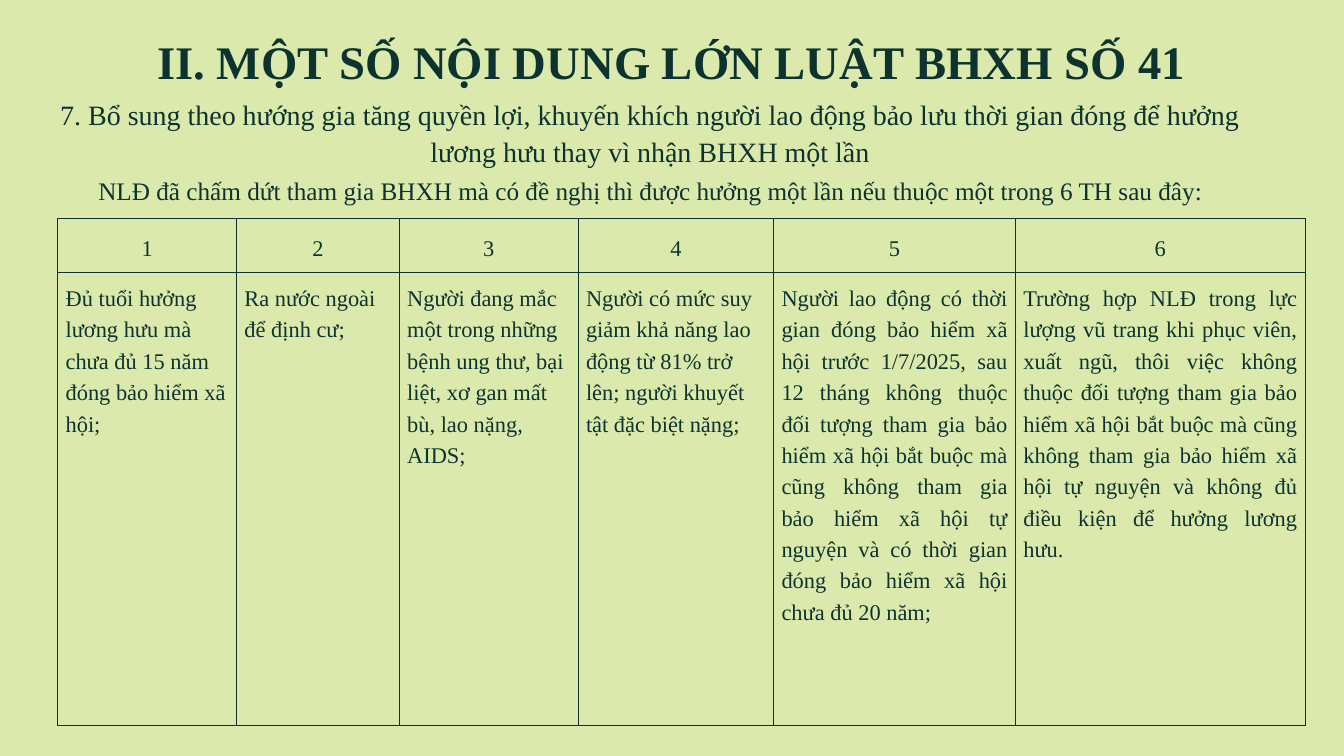
from lxml import etree
from pptx import Presentation
from pptx.dml.color import RGBColor
from pptx.enum.text import MSO_ANCHOR as Anchor, MSO_AUTO_SIZE as AutoSize, PP_ALIGN as Align
from pptx.oxml.ns import qn
from pptx.util import Cm, Pt

INK, PAPER = "0D3330", "DBEAAC"
FONT = "Times New Roman"

COLUMN_WIDTHS = [6.76, 6.15, 6.76, 7.39, 9.14, 10.95]
ROW_HEIGHTS = [2.03, 17.15]
CASES = [
    ("Đủ tuổi hưởng lương hưu mà chưa đủ 15 năm đóng bảo hiểm xã hội;", Align.LEFT),
    ("Ra nước ngoài để định cư;", Align.LEFT),
    ("Người đang mắc một trong những bệnh ung thư, bại liệt, xơ gan mất bù, "
     "lao nặng, AIDS;", Align.LEFT),
    ("Người có mức suy giảm khả năng lao động từ 81% trở lên; "
     "người khuyết tật đặc biệt nặng;", Align.LEFT),
    ("Người lao động có thời gian đóng bảo hiểm xã hội trước 1/7/2025, sau 12 tháng "
     "không thuộc đối tượng tham gia bảo hiểm xã hội bắt buộc mà cũng không tham gia "
     "bảo hiểm xã hội tự nguyện và có thời gian đóng bảo hiểm xã hội chưa đủ 20 năm;",
     Align.JUSTIFY),
    ("Trường hợp NLĐ trong lực lượng vũ trang khi phục viên, xuất ngũ, thôi việc "
     "không thuộc đối tượng tham gia bảo hiểm xã hội bắt buộc mà cũng không tham gia "
     "bảo hiểm xã hội tự nguyện và không đủ điều kiện để hưởng lương hưu.",
     Align.JUSTIFY),
]


def rgb(color):
    return RGBColor.from_string(color)


def set_all(obj, values):
    for name, value in values.items():
        setattr(obj, name, value)


class Deck:
    """Holds the style and the current slide."""

    def __init__(self, width, height):
        self.prs = Presentation()
        self.prs.slide_width, self.prs.slide_height = Cm(width), Cm(height)
        self.s = None

    def slide(self, color):
        self.s = self.prs.slides.add_slide(self.prs.slide_layouts[6])
        fill = self.s.background.fill
        fill.solid()
        fill.fore_color.rgb = rgb(color)

    def paragraph(self, tf, text, size, leading, align, bold=False):
        p = tf.paragraphs[0]
        set_all(p, {"alignment": align, "line_spacing": Pt(leading)})
        r = p.add_run()
        r.text = text
        set_all(r.font, {"name": FONT, "size": Pt(size), "bold": bold})
        r.font.color.rgb = rgb(INK)

    def text(self, box, text, size, leading, bold=False):
        tf = self.s.shapes.add_textbox(*map(Cm, box)).text_frame
        set_all(tf, {"word_wrap": True, "auto_size": AutoSize.SHAPE_TO_FIT_TEXT,
                     "margin_left": 0, "margin_right": 0,
                     "margin_top": 0, "margin_bottom": 0})
        self.paragraph(tf, text, size, leading, Align.CENTER, bold)

    def borders(self, cell):
        """Draw a thin line on all four sides of a cell."""
        tc_pr = cell._tc.get_or_add_tcPr()
        for i, side in enumerate(("lnL", "lnR", "lnT", "lnB")):
            ln = etree.Element(qn(f"a:{side}"), w=str(int(Pt(0.75))))
            fill = etree.SubElement(ln, qn("a:solidFill"))
            etree.SubElement(fill, qn("a:srgbClr"), val=INK)
            tc_pr.insert(i, ln)

    def table(self, left, top, widths, heights, rows):
        """Add a table; each cell is (text, alignment, anchor)."""
        table = self.s.shapes.add_table(
            len(heights), len(widths), Cm(left), Cm(top),
            Cm(sum(widths)), Cm(sum(heights))).table
        set_all(table, {"first_row": False, "horz_banding": False})
        for column, width in zip(table.columns, widths):
            column.width = Cm(width)
        for row, height, values in zip(table.rows, heights, rows):
            row.height = Cm(height)
            for cell, (text, align, anchor) in zip(row.cells, values):
                margin = Cm(0.3)
                set_all(cell, {"vertical_anchor": anchor,
                               "margin_left": margin, "margin_right": margin,
                               "margin_top": margin, "margin_bottom": margin})
                cell.fill.background()
                self.borders(cell)
                self.paragraph(cell.text_frame, text, 24, 33.6, align)


def main():
    deck = Deck(50.8, 28.58)
    deck.slide(PAPER)
    header = [(str(n), Align.CENTER, Anchor.MIDDLE) for n in range(1, len(CASES) + 1)]
    body = [(text, align, Anchor.TOP) for text, align in CASES]
    deck.table(2.18, 8.26, COLUMN_WIDTHS, ROW_HEIGHTS, [header, body])
    deck.text((2.03, 3.56, 45.09, 2.79),
              "7. Bổ sung theo hướng gia tăng quyền lợi, khuyến khích người lao động "
              "bảo lưu thời gian đóng để hưởng lương hưu thay vì nhận BHXH một lần",
              30, 39.6)
    deck.text((0, 6.35, 49.15, 1.32),
              "NLĐ đã chấm dứt tham gia BHXH mà có đề nghị thì được hưởng một lần "
              "nếu thuộc một trong 6 TH sau đây:", 27, 40.5)
    deck.text((2.84, 1.14, 45.09, 2.08),
              "II. MỘT SỐ NỘI DUNG LỚN LUẬT BHXH SỐ 41", 50, 62.4, bold=True)
    deck.prs.save("out.pptx")


if __name__ == "__main__":
    main()
